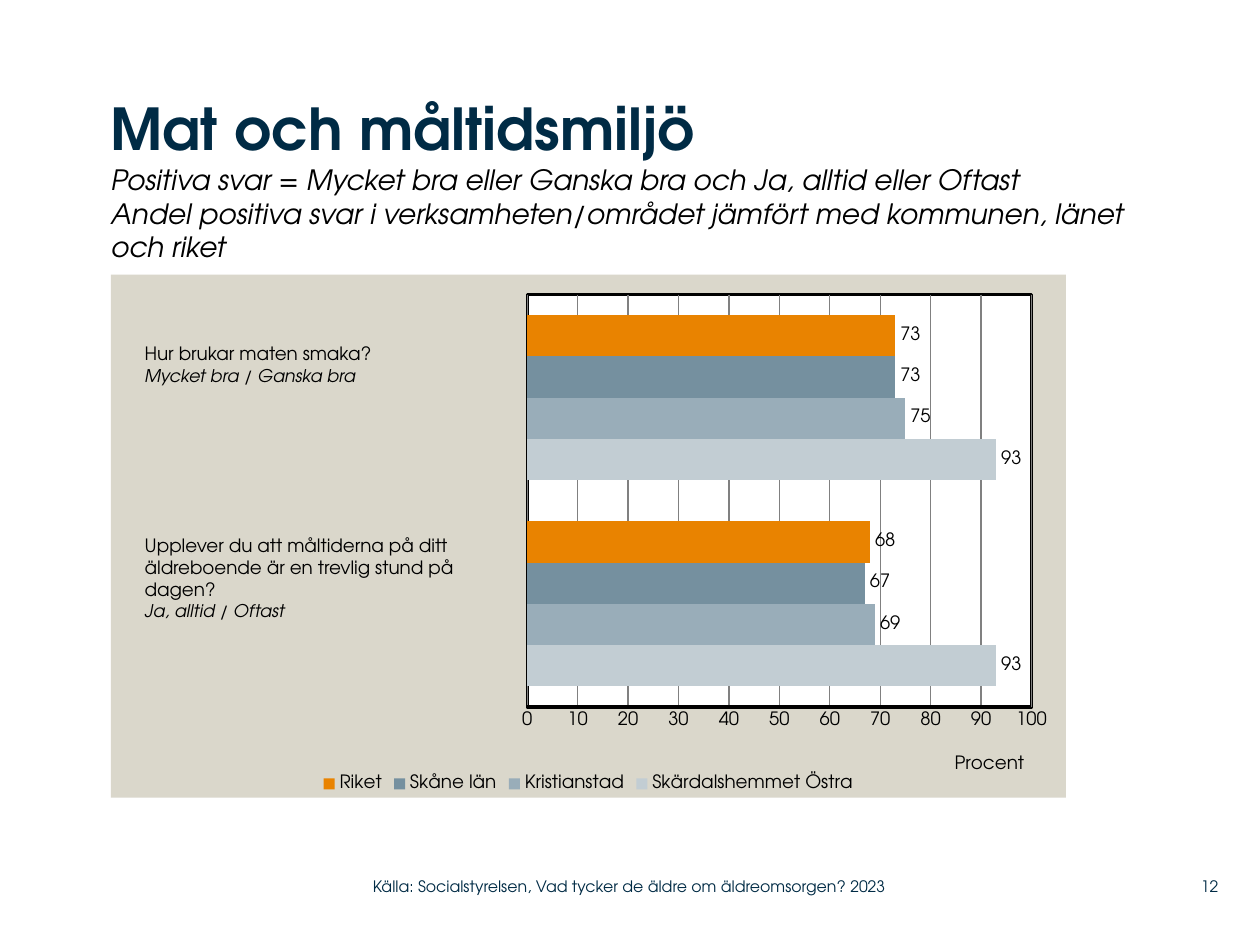
from lxml.etree import SubElement
from pptx import Presentation
from pptx.chart.data import CategoryChartData
from pptx.dml.color import RGBColor
from pptx.enum.chart import XL_CHART_TYPE as ChartType
from pptx.enum.chart import XL_LABEL_POSITION as LabelPosition
from pptx.enum.chart import XL_LEGEND_POSITION as LegendPosition
from pptx.enum.chart import XL_TICK_MARK as TickMark
from pptx.enum.text import MSO_ANCHOR as Anchor
from pptx.enum.text import PP_ALIGN as Align
from pptx.oxml import parse_xml
from pptx.oxml.ns import nsdecls, qn
from pptx.util import Inches, Pt

FONT = "TeX Gyre Adventor"
COLORS = {
    "navy": "002B45",
    "black": "000000",
    "white": "FFFFFF",
    "sand": "DAD7CB",
    "grid": "808080",
}
SERIES = [
    ("Skärdalshemmet Östra", (93, 93), "C2CDD3"),
    ("Kristianstad", (69, 75), "99ADB9"),
    ("Skåne län", (67, 73), "75909F"),
    ("Riket", (68, 73), "E98300"),
]
QUESTIONS = [
    (2.67, 0.63, ["Hur brukar maten smaka?"], "Mycket bra / Ganska bra"),
    (4.19, 0.98,
     ["Upplever du att måltiderna på ditt äldreboende är en trevlig stund på",
      "dagen?"],
     "Ja, alltid / Oftast"),
]


def write(paragraph, text, size=10.5, color="black", bold=False, italic=False):
    for index, line in enumerate(text.split("\n")):
        if index:
            paragraph.add_line_break()
        if line:
            run = paragraph.add_run()
            run.text = line
            run.font.name = FONT
            run.font.size = Pt(size)
            run.font.bold = bold
            run.font.italic = italic
            run.font.color.rgb = RGBColor.from_string(COLORS[color])


def shape_format(fill, line=None, width=0):
    outline = (
        f'<a:ln w="{Pt(width)}"><a:solidFill><a:srgbClr val="{line}"/></a:solidFill></a:ln>'
        if line else "<a:ln><a:noFill/></a:ln>"
    )
    return parse_xml(
        f'<c:spPr {nsdecls("c", "a")}><a:solidFill><a:srgbClr val="{fill}"/>'
        f"</a:solidFill>{outline}</c:spPr>"
    )


def manual_layout(parent, position, **values):
    for old in parent.findall(qn("c:layout")):
        parent.remove(old)
    layout = parse_xml(f'<c:layout {nsdecls("c")}/>')
    manual = SubElement(layout, qn("c:manualLayout"))
    for name, value in values.items():
        SubElement(manual, qn(f"c:{name}")).set("val", str(value))
    parent.insert(position, layout)


class SlideBuilder:
    def __init__(self, presentation):
        self.width = presentation.slide_width
        self.height = presentation.slide_height
        self.slide = presentation.slides.add_slide(presentation.slide_layouts[6])

    def place(self, left, top, width, height):
        return (
            int(self.width * left / 10), int(self.height * top / 7.5),
            int(self.width * width / 10), int(self.height * height / 7.5),
        )

    def text(self, box, paragraphs, inset=True, anchor=Anchor.TOP, align=Align.LEFT):
        shape = self.slide.shapes.add_textbox(*self.place(*box))
        frame = shape.text_frame
        frame.word_wrap = True
        frame.vertical_anchor = anchor
        if not inset:
            frame.margin_left = frame.margin_right = 0
            frame.margin_top = frame.margin_bottom = 0
        for index, runs in enumerate(paragraphs):
            paragraph = frame.add_paragraph() if index else frame.paragraphs[0]
            paragraph.alignment = align
            for text, style in runs:
                write(paragraph, text, **style)

    def footer(self, box, text, align=Align.LEFT):
        runs = [(text, {"size": 9, "color": "navy"})]
        self.text(box, [runs], inset=False, anchor=Anchor.MIDDLE, align=align)

    def bar_chart(self, box, categories, series_rows, axis_title):
        data = CategoryChartData(number_format="0")
        data.categories = categories
        for name, values, _ in series_rows:
            data.add_series(name, values)
        frame = self.slide.shapes.add_chart(
            ChartType.BAR_CLUSTERED, *self.place(*box), data
        )
        chart = frame.chart
        chart.has_title = False
        chart.font.name = FONT
        chart.font.size = Pt(10.5)
        chart.font.color.rgb = RGBColor.from_string(COLORS["black"])
        chart.has_legend = True
        chart.legend.position = LegendPosition.BOTTOM
        chart.legend.include_in_layout = False
        self.style_bars(chart.plots[0], series_rows)
        self.style_axes(chart, axis_title)

        space = chart.element
        space.find(qn("c:chart")).addnext(shape_format(COLORS["sand"]))
        area = space.find(f".//{qn('c:plotArea')}")
        area.append(shape_format(COLORS["white"], COLORS["black"], 2))
        manual_layout(
            area, 0, layoutTarget="inner", xMode="edge", yMode="edge",
            x=0.436, y=0.038, w=0.528, h=0.789,
        )

    def style_bars(self, plot, series_rows):
        plot.gap_width = 100
        plot.overlap = 0
        plot.vary_by_categories = False
        for series, (_, _, color) in zip(plot.series, series_rows):
            series.format.fill.solid()
            series.format.fill.fore_color.rgb = RGBColor.from_string(color)
            labels = series.data_labels
            labels.show_value = True
            labels.position = LabelPosition.OUTSIDE_END
            labels.font.name = FONT
            labels.font.size = Pt(10.5)

    def style_axes(self, chart, title):
        chart.category_axis.visible = False
        axis = chart.value_axis
        axis.minimum_scale, axis.maximum_scale, axis.major_unit = 0, 100, 10
        axis.major_tick_mark = axis.minor_tick_mark = TickMark.NONE
        axis.has_major_gridlines = True
        for line, color, width in (
            (axis.format.line, "black", 2),
            (axis.major_gridlines.format.line, "grid", 0.75),
        ):
            line.color.rgb = RGBColor.from_string(COLORS[color])
            line.width = Pt(width)
        write(axis.axis_title.text_frame.paragraphs[0], title)
        manual_layout(
            axis.axis_title._element, 1, xMode="edge", yMode="edge", x=0.88, y=0.91
        )


def main():
    presentation = Presentation()
    presentation.slide_width = Inches(10)
    presentation.slide_height = Inches(7.5)
    builder = SlideBuilder(presentation)
    builder.bar_chart((0.88, 2.18, 7.58, 4.15), ["1", "2"], SERIES, "Procent")
    builder.text((0.88, 0.74, 8.42, 1.44), [[
        ("Mat och måltidsmiljö\n", {"size": 33, "color": "navy", "bold": True}),
        ("Positiva svar = Mycket bra eller Ganska bra och Ja, alltid eller Oftast\n"
         "Andel positiva svar i verksamheten/området jämfört med kommunen, länet och riket",
         {"size": 16, "italic": True}),
    ]], inset=False)
    for top, height, question, answer in QUESTIONS:
        paragraphs = [[(line, {})] for line in question]
        paragraphs.append([(answer, {"size": 10, "italic": True})])
        builder.text((1.05, top, 2.77, height), paragraphs)
    builder.footer((9.2, 6.89, 0.47, 0.29), "12", Align.RIGHT)
    builder.footer(
        (2.96, 6.89, 4.43, 0.29),
        "Källa: Socialstyrelsen, Vad tycker de äldre om äldreomsorgen? 2023",
    )
    presentation.save("out.pptx")


if __name__ == "__main__":
    main()
